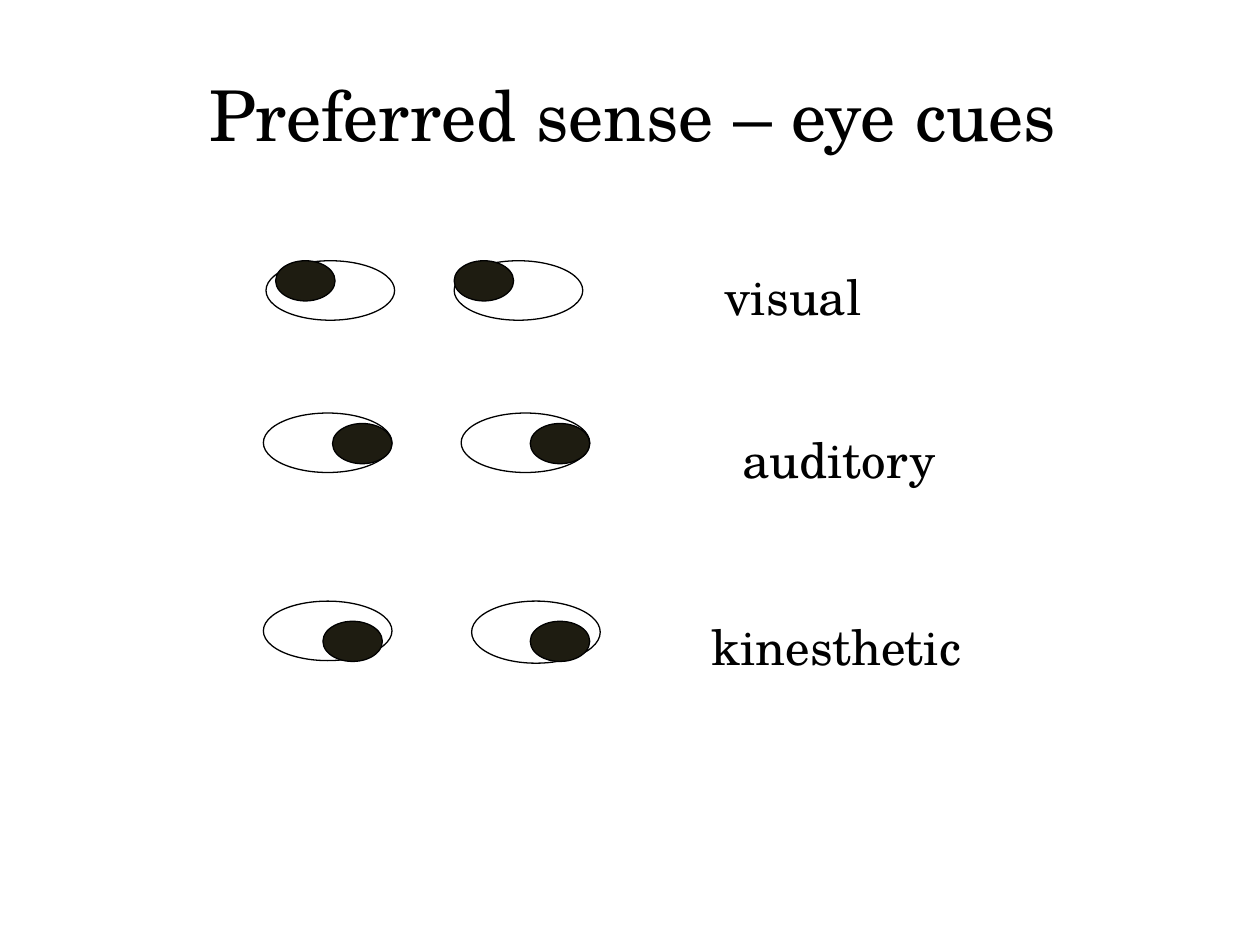
from pptx import Presentation
from pptx import util as u
from pptx.dml.color import RGBColor
from pptx.enum import shapes, text

BLACK = RGBColor(0x00, 0x00, 0x00)
PUPIL_COLOR = RGBColor(0x1E, 0x1C, 0x11)
FONT = "TeX Gyre Schola"
EYE_WIDTH, EYE_HEIGHT = 73.5, 34
PUPIL_WIDTH, PUPIL_HEIGHT = 34, 23

# Eyes are (left, top, height), pupils (left, top), labels (text, left, top, width).
ROWS = [
    {"eyes": [(152, 149, EYE_HEIGHT), (259.5, 149, EYE_HEIGHT)],
     "pupils": [(157.5, 149), (259.5, 149)],
     "label": ("visual", 407, 149, 181.5)},
    {"eyes": [(150.5, 236, EYE_HEIGHT), (263.5, 236, EYE_HEIGHT)],
     "pupils": [(190, 242), (303, 242)],
     "label": ("auditory", 417, 242, 153.5)},
    {"eyes": [(150.5, 343.5, EYE_HEIGHT), (269.5, 343.5, 35.5)],
     "pupils": [(184.5, 355), (303, 355)],
     "label": ("kinesthetic", 399.5, 349, 170)},
]


def write(shape, content, *, size, align=text.PP_ALIGN.LEFT,
          anchor=text.MSO_ANCHOR.TOP, color=BLACK, font=FONT):
    frame = shape.text_frame
    frame.word_wrap = True
    frame.vertical_anchor = anchor
    paragraph = frame.paragraphs[0]
    paragraph.alignment = align
    run = paragraph.add_run()
    run.text = content
    run.font.name = font
    run.font.size = u.Pt(size)
    run.font.color.rgb = color


class EyeCueSlide:
    line_width = 0.75
    title_size = 40
    label_size = 28
    label_height = 41

    def __init__(self, presentation):
        self.slide = presentation.slides.add_slide(presentation.slide_layouts[6])

    def text_box(self, left, top, width, height):
        return self.slide.shapes.add_textbox(
            u.Pt(left), u.Pt(top), u.Pt(width), u.Pt(height))

    def title(self, content):
        write(self.text_box(37.5, 20, 648, 90), content, size=self.title_size,
              align=text.PP_ALIGN.CENTER, anchor=text.MSO_ANCHOR.MIDDLE)

    def label(self, content, left, top, width):
        box = self.text_box(left, top, width, self.label_height)
        write(box, content, size=self.label_size)
        box.text_frame.auto_size = text.MSO_AUTO_SIZE.SHAPE_TO_FIT_TEXT

    def ellipse(self, left, top, width, height, fill=None):
        shape = self.slide.shapes.add_shape(
            shapes.MSO_SHAPE.OVAL, u.Pt(left), u.Pt(top), u.Pt(width), u.Pt(height))
        shape.shadow.inherit = False
        if fill is None:
            shape.fill.background()
        else:
            shape.fill.solid()
            shape.fill.fore_color.rgb = fill
        shape.line.color.rgb = BLACK
        shape.line.width = u.Pt(self.line_width)

    def eye(self, left, top, height):
        self.ellipse(left, top, EYE_WIDTH, height)

    def pupil(self, left, top):
        self.ellipse(left, top, PUPIL_WIDTH, PUPIL_HEIGHT, PUPIL_COLOR)


def main():
    presentation = Presentation()
    presentation.slide_width, presentation.slide_height = u.Pt(720), u.Pt(540)
    page = EyeCueSlide(presentation)
    page.title("Preferred sense – eye cues")
    for row in ROWS:
        for eye in row["eyes"]:
            page.eye(*eye)
        for pupil in row["pupils"]:
            page.pupil(*pupil)
        page.label(*row["label"])
    presentation.save("out.pptx")


if __name__ == "__main__":
    main()
